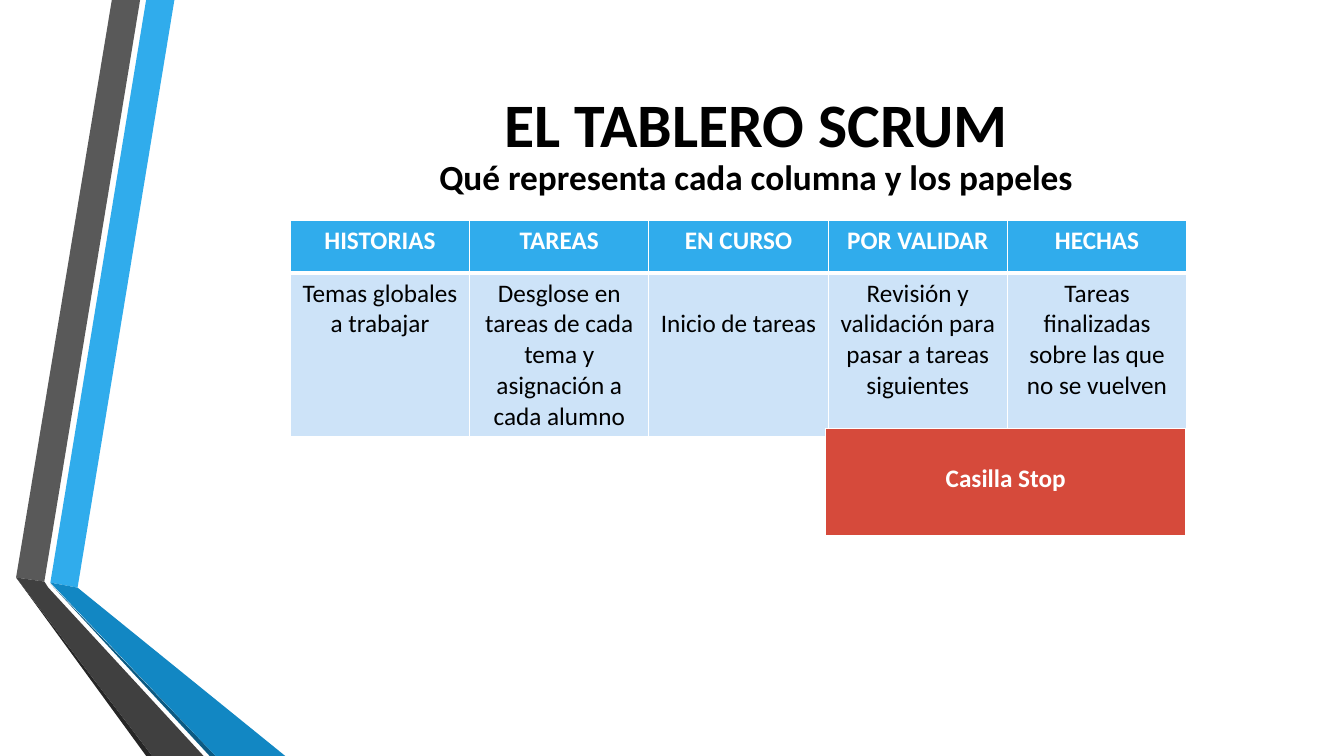
import pptx
import pptx.util
import pptx.dml.color
import pptx.enum.text
import pptx.oxml
import pptx.oxml.ns

Inches = pptx.util.Inches
Pt = pptx.util.Pt
FONT = "Calibri"
WHITE, BLACK = "FFFFFF", "000000"
BLUE, PALE_BLUE, RED = "30ACEC", "CDE3F8", "D64A3B"

RIBBONS = [
    (BLUE, [(0.5, 5.78), (0.77, 5.83), (1.73, 0), (1.45, 0)]),
    ("595959", [(1.39, 0), (1.11, 0), (0.16, 5.73), (0.44, 5.77)]),
    ("262626", [(0.16, 5.73), (1.45, 7.5), (1.51, 7.5)]),
    ("0C5A82", [(0.5, 5.79), (2.08, 7.5), (2.14, 7.5)]),
    ("1287C3", [(0.5, 5.78), (2.14, 7.5), (2.83, 7.5), (0.77, 5.83)]),
    ("404040", [(2.02, 7.5), (0.48, 5.83), (0.44, 5.77), (0.16, 5.73), (1.51, 7.5)]),
]
COLUMNS = [
    ("HISTORIAS", "Temas globales a trabajar"),
    ("TAREAS", "Desglose en tareas de cada tema y asignación a cada alumno"),
    ("EN CURSO", "Inicio de tareas"),
    ("POR VALIDAR", "Revisión y validación para pasar a tareas siguientes"),
    ("HECHAS", "Tareas finalizadas sobre las que no se vuelven"),
]


def color(value):
    return pptx.dml.color.RGBColor.from_string(value)


def format_run(run, size, hex_color, bold):
    run.font.name = FONT
    run.font.size = Pt(size)
    run.font.bold = bold
    run.font.color.rgb = color(hex_color)


def add_ribbons(slide, left, top):
    for fill, outline in RIBBONS:
        points = [(Inches(left + x), Inches(top + y)) for x, y in outline]
        builder = slide.shapes.build_freeform(*points[0], scale=1.0)
        builder.add_line_segments(points[1:], close=True)
        ribbon = builder.convert_to_shape()
        ribbon.shadow.inherit = False
        ribbon.fill.solid()
        ribbon.fill.fore_color.rgb = color(fill)
        ribbon.line.fill.background()


def add_heading(slide, left, top, width, height):
    heading = slide.shapes.title
    heading.left, heading.top = Inches(left), Inches(top)
    heading.width, heading.height = Inches(width), Inches(height)
    frame = heading.text_frame
    frame.text = "EL TABLERO SCRUM\vQué representa cada columna y los papeles"
    frame.word_wrap = True
    frame.auto_size = pptx.enum.text.MSO_AUTO_SIZE.NONE
    frame.vertical_anchor = pptx.enum.text.MSO_ANCHOR.BOTTOM
    paragraph = frame.paragraphs[0]
    paragraph.alignment = pptx.enum.text.PP_ALIGN.CENTER
    paragraph.line_spacing = 0.9
    for run, size in zip(paragraph.runs, (44.1, 25.2)):
        format_run(run, size, BLACK, True)


def set_borders(cell, top, bottom):
    properties = cell._tc.get_or_add_tcPr()
    widths = {"lnL": 1, "lnR": 1, "lnT": top, "lnB": bottom}
    for index, (side, width) in enumerate(widths.items()):
        properties.insert(index, pptx.oxml.parse_xml(
            f'<a:{side} {pptx.oxml.ns.nsdecls("a")} w="{Pt(width)}"><a:solidFill>'
            f'<a:srgbClr val="{WHITE}"/></a:solidFill></a:{side}>'))


def fill_cell(cell, text, fill, text_color, bold, top=1, bottom=1, margin_top=0.05):
    cell.text_frame.text = text
    cell.margin_top = Inches(margin_top)
    paragraph = cell.text_frame.paragraphs[0]
    paragraph.alignment = pptx.enum.text.PP_ALIGN.CENTER
    format_run(paragraph.runs[0], 18, text_color, bold)
    cell.fill.solid()
    cell.fill.fore_color.rgb = color(fill)
    set_borders(cell, top, bottom)


def add_board(slide, left, top, width, header_height, body_height):
    board = slide.shapes.add_table(
        2, len(COLUMNS), Inches(left), Inches(top), Inches(width),
        Inches(header_height + body_height)).table
    board.rows[0].height = Inches(header_height)
    board.rows[1].height = Inches(body_height)
    for index, (header, meaning) in enumerate(COLUMNS):
        fill_cell(board.cell(0, index), header, BLUE, WHITE, True, bottom=3)
        margin_top = 0.35 if header == "EN CURSO" else 0.05
        fill_cell(board.cell(1, index), meaning, PALE_BLUE, BLACK, False,
                  top=3, margin_top=margin_top)


def add_stop_box(slide, left, top, width, height):
    stop_box = slide.shapes.add_table(
        1, 1, Inches(left), Inches(top), Inches(width), Inches(height)).table
    fill_cell(stop_box.cell(0, 0), "Casilla Stop", RED, WHITE, True,
              bottom=3, margin_top=0.35)


def main():
    deck = pptx.Presentation()
    deck.slide_width, deck.slide_height = Inches(13.33), Inches(7.5)
    slide = deck.slides.add_slide(deck.slide_layouts.get_by_name("Title Only"))
    add_ribbons(slide, 0, 0)
    add_heading(slide, 3.79, 1.32, 7.42, 0.7)
    add_board(slide, 2.88, 2.19, 8.89, 0.52, 1.6)
    add_stop_box(slide, 8.19, 4.25, 3.57, 1.08)
    deck.save("out.pptx")


if __name__ == "__main__":
    main()
